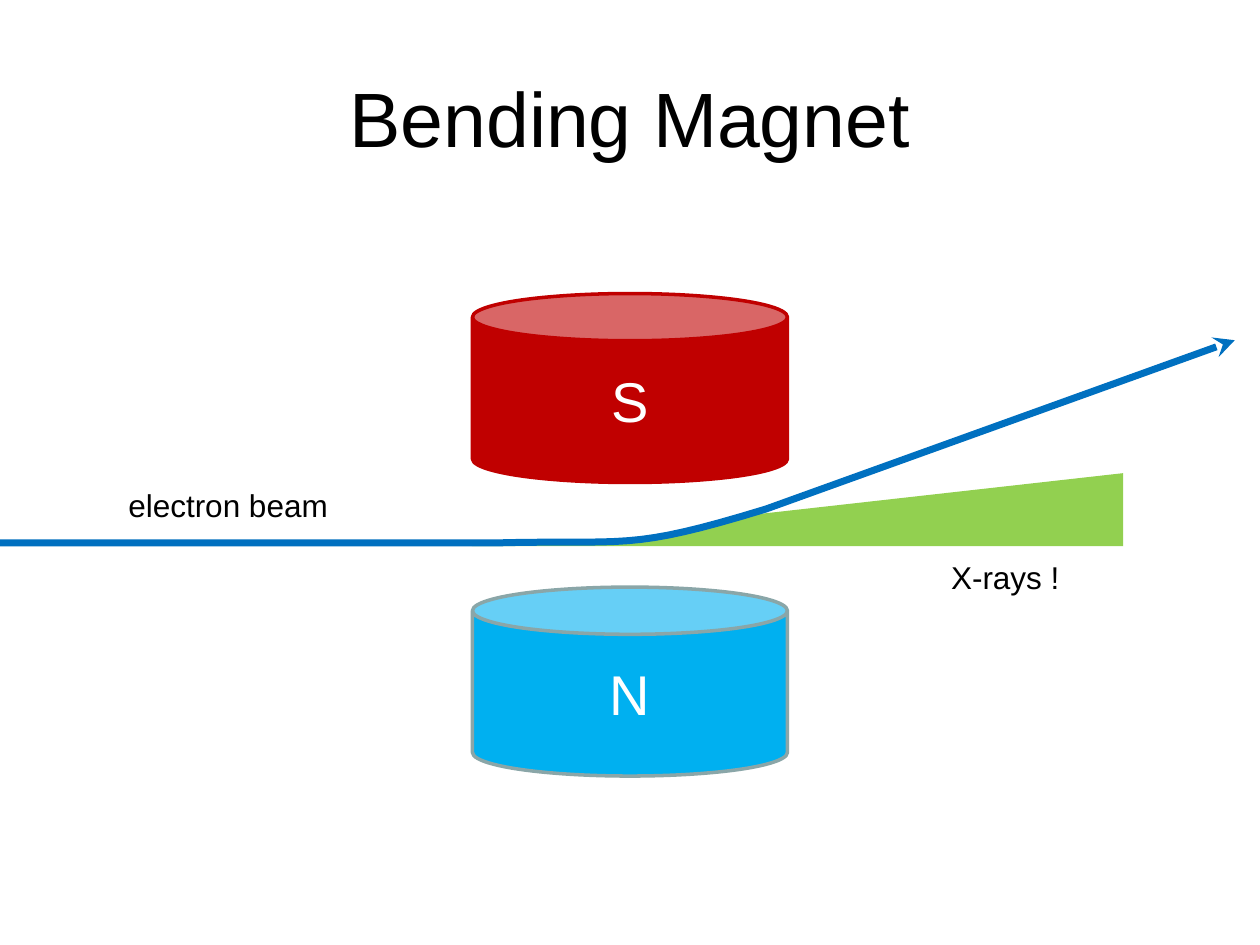
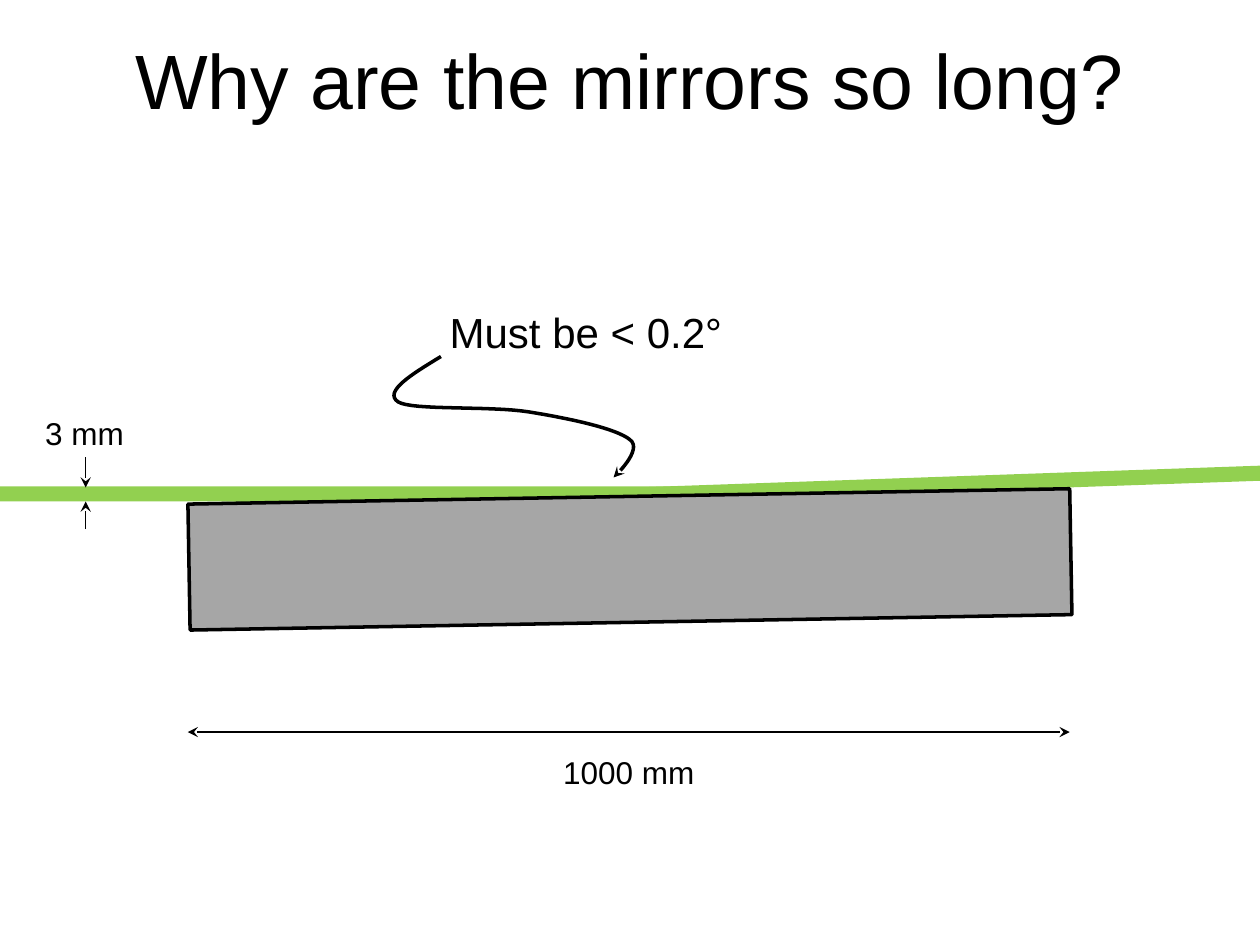
from dataclasses import dataclass
from typing import NamedTuple

from lxml import etree
from pptx import Presentation
from pptx.dml.color import RGBColor
from pptx.enum.shapes import MSO_CONNECTOR, MSO_SHAPE
from pptx.enum.text import MSO_ANCHOR, MSO_AUTO_SIZE, PP_ALIGN
from pptx.oxml.ns import qn
from pptx.util import Pt

CAN, BAR, WEDGE = MSO_SHAPE.CAN, MSO_SHAPE.RECTANGLE, MSO_SHAPE.ISOSCELES_TRIANGLE
LEFT, CENTER = PP_ALIGN.LEFT, PP_ALIGN.CENTER
TOP, MIDDLE = MSO_ANCHOR.TOP, MSO_ANCHOR.MIDDLE
GROW, FIXED = MSO_AUTO_SIZE.SHAPE_TO_FIT_TEXT, MSO_AUTO_SIZE.NONE
STRAIGHT = MSO_CONNECTOR.STRAIGHT

SCALE = 9144  # EMU in one px, 100 px to the inch
STEPS = 16    # chords for each curve


@dataclass(frozen=True)
class Theme:
    font: str = "Arial"
    ink: str = "000000"
    paper: str = "FFFFFF"
    ray: str = "92D050"
    beam: str = "0070C0"
    north: str = "00B0F0"
    rim: str = "8AA6A8"
    south: str = "C00000"
    mirror: str = "A6A6A6"
    title: int = 44
    pole: int = 32
    note: int = 24
    label: int = 18
    thin: float = 0.75
    edge: int = 2
    thick: int = 4


THEME = Theme()


class Box(NamedTuple):
    left: int
    top: int
    width: int
    height: int


@dataclass(frozen=True)
class Title:
    text: str
    box: Box


@dataclass(frozen=True)
class Label:
    text: str
    box: Box
    size: int = THEME.label


@dataclass(frozen=True)
class Solid:
    kind: int
    box: Box
    fill: str
    line: str = ""
    text: str = ""
    turn: int = 0
    adjust: tuple = ()


@dataclass(frozen=True)
class Curve:
    """A start point, then steps of one point (line) or three (curve)."""
    start: tuple
    steps: tuple
    line: str
    width: float
    fill: str = ""


@dataclass(frozen=True)
class Arrow:
    start: tuple
    end: tuple
    both: bool = False


def emu(*sizes: float) -> list[int]:
    return [round(size * SCALE) for size in sizes]


def tint(part, color: str) -> None:
    """Fill a part with one colour, or with none."""
    if color:
        part.solid()
        part.fore_color.rgb = RGBColor.from_string(color)
    else:
        part.background()


def stroke(shape, color: str, width: float) -> None:
    tint(shape.line.fill, color)
    if color:
        shape.line.width = Pt(width)


def point(shape, *ends: str) -> None:
    line = shape.element.spPr.find(qn("a:ln"))
    for end in ends:
        etree.SubElement(line, qn(f"a:{end}"), type="stealth")


def write(frame, text: str, size: int, color: str, align, **form) -> None:
    for name, value in form.items():
        setattr(frame, name, value)
    para = frame.paragraphs[0]
    para.alignment = align
    run = para.add_run()
    run.text = text
    for name, value in {"name": THEME.font, "size": Pt(size)}.items():
        setattr(run.font, name, value)
    run.font.color.rgb = RGBColor.from_string(color)


def draw_title(slide, item: Title) -> None:
    frame = slide.shapes.add_textbox(*emu(*item.box)).text_frame
    write(frame, item.text, THEME.title, THEME.ink, CENTER,
          word_wrap=True, auto_size=FIXED, vertical_anchor=MIDDLE)


def draw_label(slide, item: Label) -> None:
    frame = slide.shapes.add_textbox(*emu(*item.box)).text_frame
    write(frame, item.text, item.size, THEME.ink, LEFT,
          word_wrap=False, auto_size=GROW, vertical_anchor=TOP)


def draw_solid(slide, item: Solid) -> None:
    shape = slide.shapes.add_shape(item.kind, *emu(*item.box))
    shape.shadow.inherit = False
    shape.rotation = item.turn
    for place, value in enumerate(item.adjust):
        shape.adjustments[place] = value
    tint(shape.fill, item.fill)
    stroke(shape, item.line, THEME.edge)
    if item.text:
        write(shape.text_frame, item.text, THEME.pole, THEME.paper, CENTER,
              vertical_anchor=MIDDLE)


def trace(start: tuple, steps: tuple) -> list[tuple]:
    """Turn lines and cubic curves into a run of points."""
    points = [start]
    for step in steps:
        if len(step) == 1:
            points += step
            continue
        knots = (points[-1], *step)
        for count in range(1, STEPS + 1):
            t = count / STEPS
            u = 1 - t
            parts = (u ** 3, 3 * u * u * t, 3 * u * t * t, t ** 3)
            points.append(tuple(sum(p * k[axis] for p, k in zip(parts, knots))
                                for axis in (0, 1)))
    return points


def draw_curve(slide, item: Curve) -> None:
    first, *rest = [emu(*spot) for spot in trace(item.start, item.steps)]
    path = slide.shapes.build_freeform(*first)
    path.add_line_segments(rest, close=False)
    shape = path.convert_to_shape()
    shape.shadow.inherit = False
    tint(shape.fill, item.fill)
    stroke(shape, item.line, item.width)
    point(shape, "tailEnd")


def draw_arrow(slide, item: Arrow) -> None:
    shape = slide.shapes.add_connector(STRAIGHT, *emu(*item.start, *item.end))
    stroke(shape, THEME.ink, THEME.thin)
    point(shape, *(("headEnd", "tailEnd") if item.both else ("tailEnd",)))
    etree.SubElement(shape.element.spPr, qn("a:effectLst"))


DRAW = {Title: draw_title, Label: draw_label, Solid: draw_solid,
        Curve: draw_curve, Arrow: draw_arrow}

# Bending magnet: a beam turns between two poles
MAGNET = (
    Title("Bending Magnet", Box(50, 30, 900, 125)),
    Solid(CAN, Box(375, 466, 250, 150), THEME.north, THEME.rim, "N"),
    Solid(WEDGE, Box(604, 146, 58, 517), THEME.ray, turn=270, adjust=(0,)),
    Curve((-77, 431),
          (((390, 431),),
           ((500, 428), (497, 438), (608, 404)),
           ((980, 270),)),
          THEME.beam, THEME.thick, THEME.paper),
    Label("electron beam", Box(92, 381, 180, 40)),
    Label("X-rays !", Box(745, 438, 107, 40)),
    Solid(CAN, Box(375, 233, 250, 150), THEME.south, THEME.south, "S"),
)

# Mirror: a thin ray grazes a long block
MIRROR = (
    Solid(BAR, Box(0, 386, 849, 12), THEME.ray),
    Solid(BAR, Box(149, 383, 933, 12), THEME.ray, turn=358),
    Title("Why are the mirrors so long?", Box(75, 0, 850, 125)),
    Solid(BAR, Box(150, 394, 700, 100), THEME.mirror, THEME.ink, turn=359),
    Arrow((68, 420), (68, 398)),
    Arrow((68, 363), (68, 387)),
    Label("3 mm", Box(26, 324, 83, 40)),
    Label("Must be < 0.2°", Box(347, 238, 238, 50), THEME.note),
    Curve((350, 283),
          (((327, 297), (304, 311), (316, 319)),
           ((327, 326), (389, 322), (420, 327)),
           ((451, 332), (489, 340), (500, 349)),
           ((511, 357), (487, 379), (487, 379))),
          THEME.ink, THEME.edge),
    Arrow((149, 581), (849, 581), both=True),
    Label("1000 mm", Box(437, 593, 125, 40)),
)


def main() -> None:
    deck = Presentation()
    deck.slide_width, deck.slide_height = emu(1000, 750)
    for items in (MAGNET, MIRROR):
        slide = deck.slides.add_slide(deck.slide_layouts[6])
        tint(slide.background.fill, THEME.paper)
        for item in items:
            DRAW[type(item)](slide, item)
    deck.save("out.pptx")


if __name__ == "__main__":
    main()
